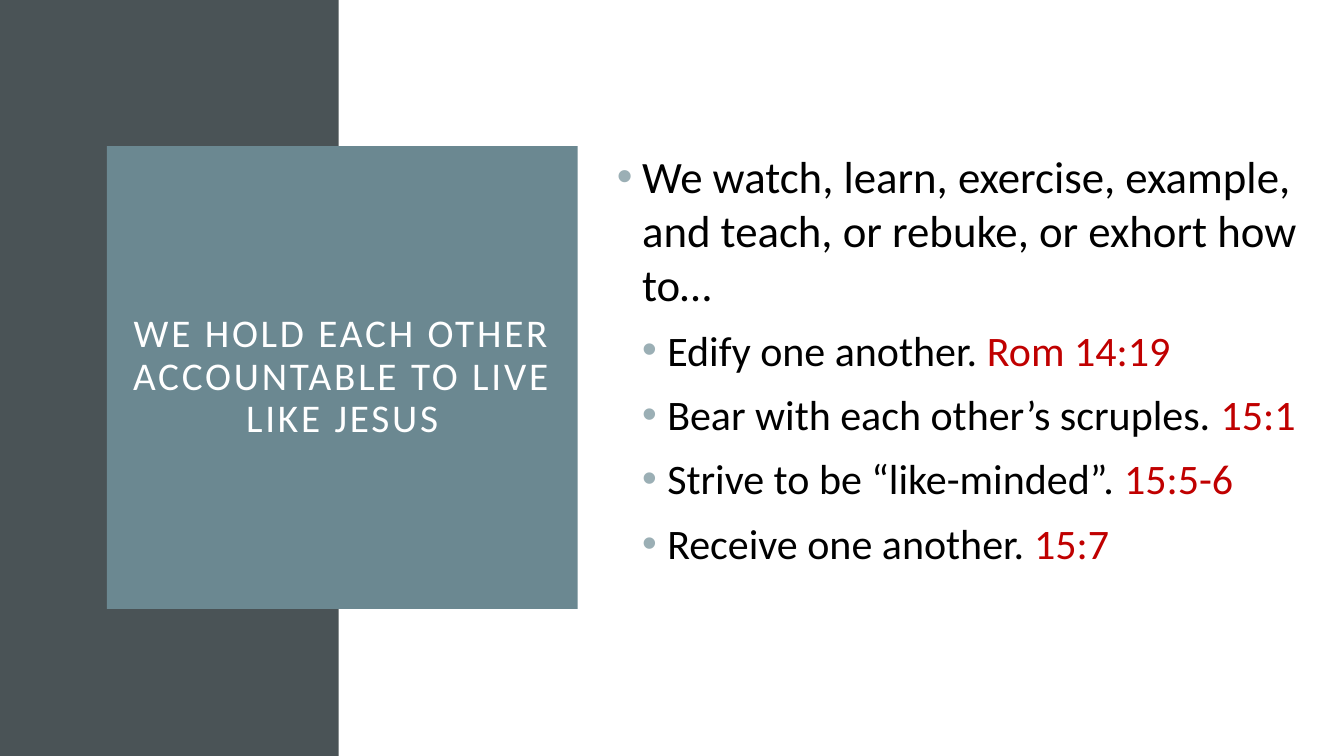
from dataclasses import dataclass

from lxml import etree
from pptx import Presentation
from pptx.dml.color import RGBColor
from pptx.enum.shapes import MSO_SHAPE
from pptx.enum.text import MSO_ANCHOR, MSO_AUTO_SIZE, PP_ALIGN
from pptx.oxml.ns import qn
from pptx.util import Inches, Pt

RECTANGLE = MSO_SHAPE.RECTANGLE
MIDDLE = MSO_ANCHOR.MIDDLE
NO_AUTOFIT = MSO_AUTO_SIZE.NONE
CENTER = PP_ALIGN.CENTER
TITLE_ONLY = 5


@dataclass(frozen=True)
class Theme:
    """Colours, font and type sizes of the deck."""
    font: str = "Calibri"
    paper: str = "FFFFFF"
    band: str = "4A5356"
    panel: str = "6B8891"
    bullet: str = "9BAFB5"
    ink: str = "000000"
    verse: str = "C00000"
    title_size: int = 28
    body_sizes: tuple = (32, 30)
    indent: float = 0.25
    space_before: int = 10
    letter_spacing: int = 2


class SlideBuilder:
    """Holds the theme and the current page, and adds each kind of element."""

    def __init__(self, deck, theme):
        self.theme = theme
        self.page = deck.slides.add_slide(deck.slide_layouts[TITLE_ONLY])
        self.paint(self.page.background.fill, theme.paper)

    def paint(self, fill, color):
        fill.solid()
        fill.fore_color.rgb = RGBColor.from_string(color)

    def place(self, shape, left, top, width, height):
        shape.left, shape.top = Inches(left), Inches(top)
        shape.width, shape.height = Inches(width), Inches(height)

    def style(self, span, size, color):
        span.font.name = self.theme.font
        span.font.size = Pt(size)
        span.font.color.rgb = RGBColor.from_string(color)

    def prepare(self, frame):
        frame.word_wrap = True
        frame.auto_size = NO_AUTOFIT
        frame.vertical_anchor = MIDDLE

    def band(self, left, top, width, height):
        box = self.page.shapes.add_shape(
            RECTANGLE, Inches(left), Inches(top), Inches(width), Inches(height))
        box.shadow.inherit = False
        self.paint(box.fill, self.theme.band)
        box.line.fill.background()

    def title(self, text, left, top, width, height, inset):
        title = self.page.shapes.title
        title.element.getparent().append(title.element)
        self.place(title, left, top, width, height)
        self.paint(title.fill, self.theme.panel)
        frame = title.text_frame
        frame.text = text
        self.prepare(frame)
        frame.margin_left = frame.margin_right = Inches(inset)
        frame.margin_top = frame.margin_bottom = Inches(inset)
        para = frame.paragraphs[0]
        para.alignment = CENTER
        para.line_spacing = 0.9
        span = para.runs[0]
        self.style(span, self.theme.title_size, self.theme.paper)
        span.font._element.set("spc", str(self.theme.letter_spacing * 100))

    def add_bullet(self, para, level):
        para.level = level
        properties = para._p.get_or_add_pPr()
        properties.set("marL", str(Inches(self.theme.indent * (level + 1))))
        properties.set("indent", str(-Inches(self.theme.indent)))
        color = etree.SubElement(properties, qn("a:buClr"))
        etree.SubElement(color, qn("a:srgbClr"), val=self.theme.bullet)
        etree.SubElement(properties, qn("a:buFont"), typeface="Arial")
        etree.SubElement(properties, qn("a:buChar"), char="•")

    def bullets(self, items, left, top, width, height, bottom_inset):
        box = self.page.shapes.add_textbox(
            Inches(left), Inches(top), Inches(width), Inches(height))
        frame = box.text_frame
        self.prepare(frame)
        frame.margin_bottom = Inches(bottom_inset)
        for index, (level, text, verse) in enumerate(items):
            para = frame.add_paragraph() if index else frame.paragraphs[0]
            para.text = text
            self.add_bullet(para, level)
            para.space_before = Pt(self.theme.space_before if index else 0)
            size = self.theme.body_sizes[level]
            self.style(para.runs[0], size, self.theme.ink)
            if verse:
                span = para.add_run()
                span.text = verse
                self.style(span, size, self.theme.verse)


def main():
    deck = Presentation()
    deck.slide_width, deck.slide_height = Inches(13.33), Inches(7.5)
    builder = SlideBuilder(deck, Theme())
    builder.band(0, 0, 3.36, 7.5)
    builder.title("WE HOLD EACH OTHER ACCOUNTABLE TO LIVE LIKE JESUS",
                  1.06, 1.45, 4.67, 4.59, inset=0.2)
    builder.bullets([
        (0, "We watch, learn, exercise, example, and teach, "
            "or rebuke, or exhort how to…", ""),
        (1, "Edify one another. ", "Rom 14:19"),
        (1, "Bear with each other’s scruples. ", "15:1"),
        (1, "Strive to be “like-minded”. ", "15:5-6"),
        (1, "Receive one another. ", "15:7"),
    ], 6.02, 0.55, 7, 6.41, bottom_inset=0.45)
    deck.save("out.pptx")


if __name__ == "__main__":
    main()
